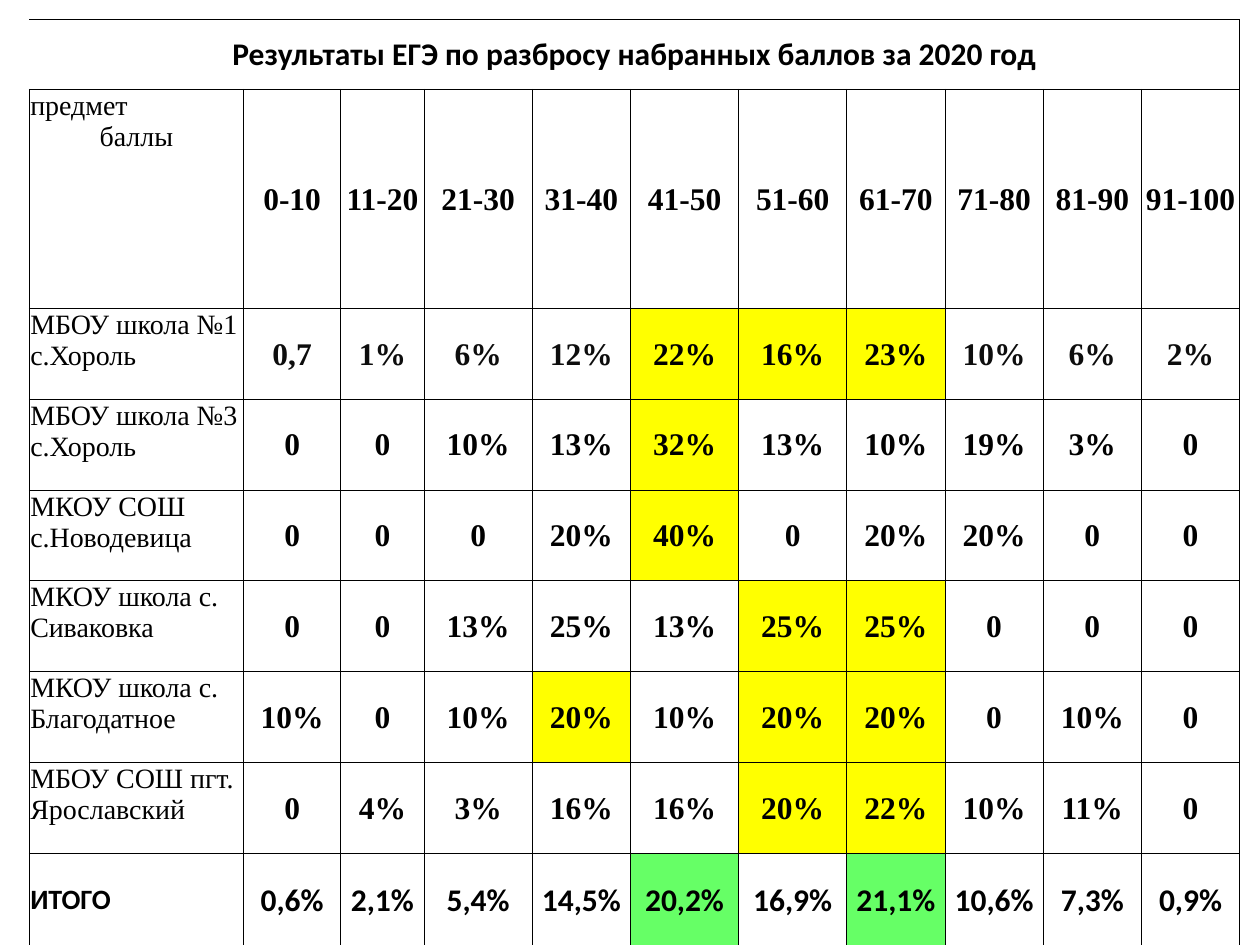
import dataclasses

import lxml.etree
import pptx
import pptx.dml.color
import pptx.enum.text
import pptx.oxml.ns
import pptx.util

Cm = pptx.util.Cm
CENTER = pptx.enum.text.PP_ALIGN.CENTER
LEFT = pptx.enum.text.PP_ALIGN.LEFT
MIDDLE = pptx.enum.text.MSO_ANCHOR.MIDDLE
TOP = pptx.enum.text.MSO_ANCHOR.TOP


@dataclasses.dataclass(frozen=True)
class Theme:
    heading_font: str = "Calibri"
    body_font: str = "Times New Roman"
    value_size: int = 18
    label_size: int = 16
    ink: str = "000000"
    soft_ink: str = "0D0D0D"
    peak: str = "FFFF00"
    total_peak: str = "66FF66"
    border_width: float = 0.5


class ResultsSlide:
    """Draws the table of exam results on one slide in the given theme."""

    def __init__(self, deck, theme):
        self.theme = theme
        self.slide = deck.slides.add_slide(deck.slide_layouts[6])

    def table(self, left, top, widths, heights):
        frame = self.slide.shapes.add_table(
            len(heights), len(widths), Cm(left), Cm(top), Cm(sum(widths)), Cm(sum(heights)))
        table = frame.table
        table.first_row = table.horz_banding = False
        for column, width in zip(table.columns, widths):
            column.width = Cm(width)
        for row, height in zip(table.rows, heights):
            row.height = Cm(height)
        return table

    def borders(self, cell, open_left=False):
        properties = cell._tc.get_or_add_tcPr()
        width = str(pptx.util.Pt(self.theme.border_width))
        for place, side in enumerate(("lnL", "lnR", "lnT", "lnB")):
            line = lxml.etree.Element(pptx.oxml.ns.qn(f"a:{side}"), w=width)
            properties.insert(place, line)
            if open_left and side == "lnL":
                lxml.etree.SubElement(line, pptx.oxml.ns.qn("a:noFill"))
                continue
            fill = lxml.etree.SubElement(line, pptx.oxml.ns.qn("a:solidFill"))
            lxml.etree.SubElement(fill, pptx.oxml.ns.qn("a:srgbClr"), val=self.theme.ink)

    def cell(self, cell, text, font, size, bold=True, align=CENTER, anchor=MIDDLE,
             fill=None, ink=None, open_left=False):
        cell.margin_left = cell.margin_right = cell.margin_top = Cm(0.02)
        cell.margin_bottom = 0
        cell.vertical_anchor = anchor
        if fill:
            cell.fill.solid()
            cell.fill.fore_color.rgb = pptx.dml.color.RGBColor.from_string(fill)
        else:
            cell.fill.background()
        self.borders(cell, open_left)
        cell.text_frame.text = text
        for paragraph in cell.text_frame.paragraphs:
            paragraph.alignment = align
            for run in paragraph.runs:
                run.font.name = font
                run.font.size = pptx.util.Pt(size)
                run.font.bold = bold
                run.font.color.rgb = pptx.dml.color.RGBColor.from_string(ink or self.theme.ink)

    def label(self, cell, text):
        self.cell(cell, text, self.theme.body_font, self.theme.label_size,
                  bold=False, align=LEFT, anchor=TOP)

    def value(self, cell, text, **style):
        self.cell(cell, text, self.theme.body_font, self.theme.value_size, **style)


WIDTHS = [4.32, 1.96, 1.68, 2.18, 1.98, 2.18, 2.18] + [1.98] * 4
HEIGHTS = [1.4, 4.42] + [1.83] * 6 + [1.88]
HEADING = "Результаты ЕГЭ по разбросу набранных баллов за 2020 год"
BANDS = "0-10 11-20 21-30 31-40 41-50 51-60 61-70 71-80 81-90 91-100".split()
SCHOOLS = [
    ("МБОУ школа №1 с.Хороль", "0,7 1% 6% 12% 22% 16% 23% 10% 6% 2%",
     {"41-50", "51-60", "61-70"}),
    ("МБОУ школа №3 с.Хороль", "0 0 10% 13% 32% 13% 10% 19% 3% 0", {"41-50"}),
    ("МКОУ СОШ с.Новодевица", "0 0 0 20% 40% 0 20% 20% 0 0", {"41-50"}),
    ("МКОУ школа с. Сиваковка", "0 0 13% 25% 13% 25% 25% 0 0 0", {"51-60", "61-70"}),
    ("МКОУ школа с. Благодатное", "10% 0 10% 20% 10% 20% 20% 0 10% 0",
     {"31-40", "51-60", "61-70"}),
    ("МБОУ СОШ пгт. Ярославский", "0 4% 3% 16% 16% 20% 22% 10% 11% 0", {"51-60", "61-70"}),
]
TOTALS = "0,6% 2,1% 5,4% 14,5% 20,2% 16,9% 21,1% 10,6% 7,3% 0,9%".split()
TOTAL_PEAKS = {"41-50", "61-70"}


def main():
    deck = pptx.Presentation()
    deck.slide_width, deck.slide_height = Cm(25.4), Cm(19.05)
    theme = Theme()
    page = ResultsSlide(deck, theme)
    results = page.table(0.59, 0.4, WIDTHS, HEIGHTS)

    heading = results.cell(0, 0)
    heading.merge(results.cell(0, len(BANDS)))
    page.cell(heading, HEADING, theme.heading_font, theme.value_size, open_left=True)

    corner = results.cell(1, 0)
    page.label(corner, "предмет\nбаллы")
    corner.text_frame.paragraphs[1].alignment = CENTER
    for column, band in enumerate(BANDS, 1):
        page.value(results.cell(1, column), band)

    for row, (school, shares, peaks) in enumerate(SCHOOLS, 2):
        page.label(results.cell(row, 0), school)
        plain_ink = theme.soft_ink if row == 2 else theme.ink
        for column, (band, share) in enumerate(zip(BANDS, shares.split()), 1):
            peak = band in peaks
            page.value(results.cell(row, column), share,
                       fill=theme.peak if peak else None,
                       ink=theme.ink if peak else plain_ink)

    last = len(HEIGHTS) - 1
    page.cell(results.cell(last, 0), "ИТОГО", theme.heading_font, theme.label_size, align=LEFT)
    for column, (band, total) in enumerate(zip(BANDS, TOTALS), 1):
        page.cell(results.cell(last, column), total, theme.heading_font, theme.value_size,
                  fill=theme.total_peak if band in TOTAL_PEAKS else None)

    deck.save("out.pptx")


if __name__ == "__main__":
    main()
